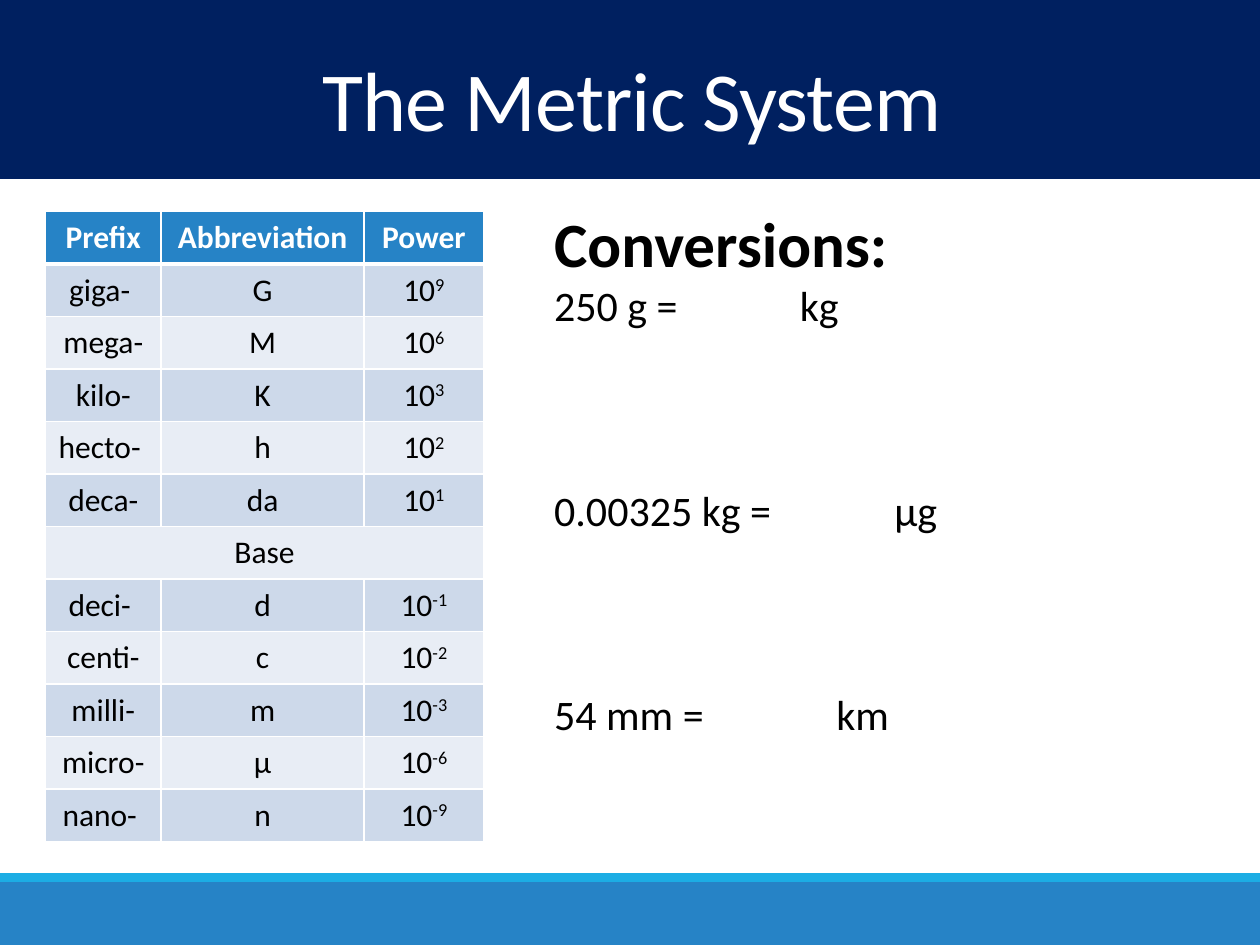
from dataclasses import dataclass

from lxml import etree
from pptx import Presentation
from pptx import util as u
from pptx.dml import color
from pptx.enum import shapes, text
from pptx.oxml import ns

FONT = "Calibri"
WHITE = "FFFFFF"
BLACK = "000000"
BLUE = "2683C6"
ROW_FILLS = ("E8EDF5", "CDD9EA")
COLUMN_WIDTHS = (0.92, 1.61, 0.95)
TABLE_HEIGHT = 5


@dataclass(frozen=True)
class Band:
    top: float
    height: float
    fill: str


@dataclass(frozen=True)
class Prefix:
    name: str
    abbreviation: str = ""
    power: str = ""


@dataclass(frozen=True)
class Conversion:
    amount: str
    unit: str
    unit_offset: float
    space_before: float


BANDS = (
    Band(7, 0.5, BLUE),
    Band(6.93, 0.07, "1CADE4"),
    Band(0, 1.42, "002060"),
)
HEADINGS = ("Prefix", "Abbreviation", "Power")
PREFIXES = (
    Prefix("giga- ", "G", "9"),
    Prefix("mega-", "M", "6"),
    Prefix("kilo-", "K", "3"),
    Prefix("hecto- ", "h", "2"),
    Prefix("deca-", "da", "1"),
    Prefix("Base"),
    Prefix("deci- ", "d", "-1"),
    Prefix("centi-", "c", "-2"),
    Prefix("milli-", "m", "-3"),
    Prefix("micro-", "μ", "-6"),
    Prefix("nano- ", "n", "-9"),
)
CONVERSIONS = (
    Conversion("250 g =", "kg", 1.95, 0),
    Conversion("0.00325 kg =", "μg", 2.7, 88),
    Conversion("54 mm =", "km", 2.24, 88),
)


def set_color(target, value: str) -> None:
    if hasattr(target, "solid"):
        target.solid()
        target = target.fore_color
    target.rgb = color.RGBColor.from_string(value)


def style_font(paragraph, size: float, value: str, bold: bool = False) -> None:
    font = paragraph.font
    font.name = FONT
    font.size = u.Pt(size)
    font.bold = bold
    set_color(font.color, value)


def add_run(paragraph, content: str, **attributes: str) -> None:
    run = paragraph.add_run()
    run.text = content
    properties = run._r.get_or_add_rPr()
    for name, value in attributes.items():
        properties.set(name, value)


def add_text_box(slide, left: float, top: float, width: float, height: float):
    shape = slide.shapes.add_textbox(
        u.Inches(left), u.Inches(top), u.Inches(width), u.Inches(height)
    )
    shape.text_frame.word_wrap = True
    return shape.text_frame


def add_band(slide, band: Band) -> None:
    shape = slide.shapes.add_shape(
        shapes.MSO_SHAPE.RECTANGLE,
        0, u.Inches(band.top), u.Inches(10), u.Inches(band.height),
    )
    shape.shadow.inherit = False
    set_color(shape.fill, band.fill)
    shape.line.fill.background()


def add_title(slide) -> None:
    frame = add_text_box(slide, 0.03, 0.42, 9.97, 0.84)
    frame.vertical_anchor = text.MSO_ANCHOR.MIDDLE
    paragraph = frame.paragraphs[0]
    paragraph.alignment = text.PP_ALIGN.CENTER
    paragraph.line_spacing = 0.85
    style_font(paragraph, 48, WHITE)
    add_run(paragraph, "The Metric System", spc="-50")


def add_borders(cell, bottom: float) -> None:
    properties = cell._tc.get_or_add_tcPr()
    for side, width in (("L", 1), ("R", 1), ("T", 1), ("B", bottom)):
        line = etree.SubElement(properties, ns.qn(f"a:ln{side}"), w=str(u.Pt(width)))
        fill = etree.SubElement(line, ns.qn("a:solidFill"))
        etree.SubElement(fill, ns.qn("a:srgbClr"), val=WHITE)


def fill_cell(cell, content: str, row: int, exponent: str = "") -> None:
    header = row == 0
    add_borders(cell, 3 if header else 1)
    set_color(cell.fill, BLUE if header else ROW_FILLS[row % 2])
    cell.vertical_anchor = text.MSO_ANCHOR.MIDDLE
    paragraph = cell.text_frame.paragraphs[0]
    paragraph.alignment = text.PP_ALIGN.CENTER
    style_font(paragraph, 18, WHITE if header else BLACK, header)
    if content:
        add_run(paragraph, content)
    if exponent:
        add_run(paragraph, exponent, baseline="30000")


def add_prefix_table(slide) -> None:
    row_count = len(PREFIXES) + 1
    table = slide.shapes.add_table(
        row_count, len(HEADINGS), u.Inches(0.36), u.Inches(1.68),
        u.Inches(sum(COLUMN_WIDTHS)), u.Inches(TABLE_HEIGHT),
    ).table
    for column, width in zip(table.columns, COLUMN_WIDTHS):
        column.width = u.Inches(width)
    for row in table.rows:
        row.height = u.Inches(TABLE_HEIGHT / row_count)
    for index, heading in enumerate(HEADINGS):
        fill_cell(table.cell(0, index), heading, 0)
    for row, prefix in enumerate(PREFIXES, 1):
        fill_cell(table.cell(row, 0), prefix.name, row)
        fill_cell(table.cell(row, 1), prefix.abbreviation, row)
        fill_cell(table.cell(row, 2), "10" if prefix.power else "", row, prefix.power)
        if not prefix.power:
            table.cell(row, 0).merge(table.cell(row, 2))


def add_conversion(frame, conversion: Conversion) -> None:
    paragraph = frame.add_paragraph()
    paragraph.space_before = u.Pt(conversion.space_before)
    properties = paragraph._p.get_or_add_pPr()
    tabs = etree.SubElement(properties, ns.qn("a:tabLst"))
    position = str(u.Inches(conversion.unit_offset))
    etree.SubElement(tabs, ns.qn("a:tab"), pos=position, algn="l")
    style_font(paragraph, 24, BLACK)
    add_run(paragraph, f"{conversion.amount}\t{conversion.unit}")


def add_conversions(slide) -> None:
    frame = add_text_box(slide, 4.3, 1.57, 5.06, 5.55)
    heading = frame.paragraphs[0]
    style_font(heading, 36, BLACK, True)
    add_run(heading, "Conversions:")
    for conversion in CONVERSIONS:
        add_conversion(frame, conversion)


def main() -> None:
    presentation = Presentation()
    presentation.slide_width = u.Inches(10)
    presentation.slide_height = u.Inches(7.5)
    slide = presentation.slides.add_slide(presentation.slide_layouts[6])
    for band in BANDS:
        add_band(slide, band)
    add_title(slide)
    add_prefix_table(slide)
    add_conversions(slide)
    presentation.save("out.pptx")


if __name__ == "__main__":
    main()
